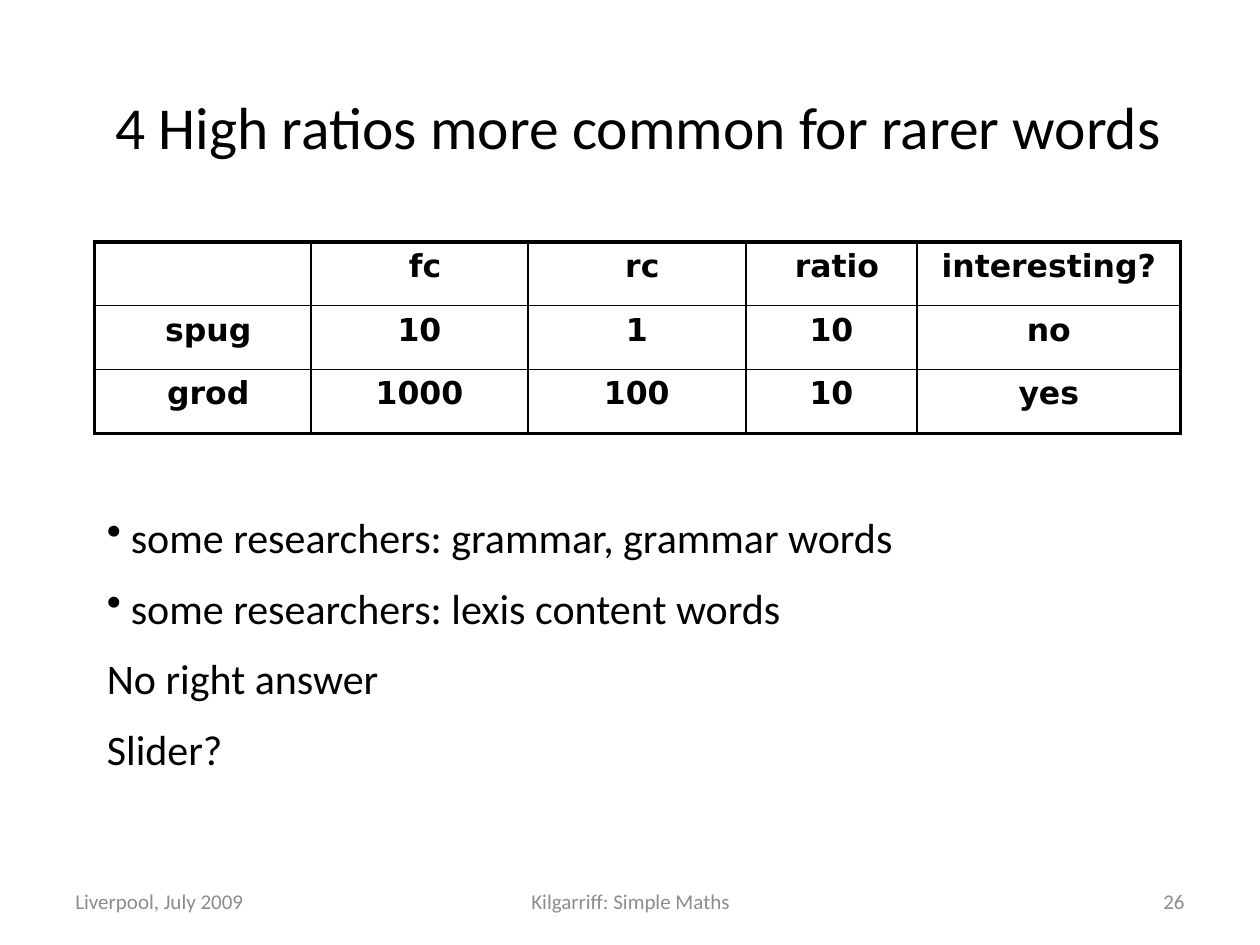
from dataclasses import dataclass

from lxml.etree import SubElement
from pptx import Presentation
from pptx.dml.color import RGBColor
from pptx.enum.text import MSO_ANCHOR, PP_ALIGN
from pptx.oxml import parse_xml
from pptx.oxml.ns import nsdecls, qn
from pptx.util import Emu, Inches, Pt


@dataclass(frozen=True)
class Theme:
    """Colours, typefaces and type sizes of the slide."""

    ink: str = "000000"
    muted: str = "8C8C8C"
    text_font: str = "Calibri"
    table_font: str = "DejaVu Sans"
    title: float = 34
    body: float = 24
    cell: float = 18
    footer: float = 12
    paragraph_gap: float = 11.5
    outer_line: float = 2.25
    inner_line: float = 1


@dataclass(frozen=True)
class Box:
    """A region in inches."""

    left: float
    top: float
    width: float
    height: float

    def emu(self):
        """Return the region as lengths for python-pptx."""
        return [Inches(v) for v in (self.left, self.top, self.width, self.height)]


THEME = Theme()
SLIDE = Box(0, 0, 10, 7.5)
COLUMN_SHARES = (1.72, 1.72, 1.73, 1.36, 2.09)
FREQUENCIES = (
    ("", " fc", " rc", " ratio", "interesting?"),
    (" spug", "10", "1", "10", "no"),
    (" grod", "1000", "100", "10", "yes"),
)
POINTS = (
    ("some researchers: grammar, grammar words", True),
    ("some researchers: lexis content words", True),
    ("No right answer", False),
    ("Slider?", False),
)
FOOTERS = (
    ("Liverpool, July 2009", 0.5, 2.33, PP_ALIGN.LEFT),
    ("Kilgarriff: Simple Maths", 3.42, 3.17, PP_ALIGN.CENTER),
    ("26", 7.17, 2.33, PP_ALIGN.RIGHT),
)


def add_text(paragraph, words, size, align=PP_ALIGN.LEFT, font=THEME.text_font,
             color=THEME.ink, bold=False):
    """Add one formatted run to a paragraph."""
    paragraph.alignment = align
    run = paragraph.add_run()
    run.text = words
    run.font.size = Pt(size)
    run.font.name = font
    run.font.bold = bold
    run.font.color.rgb = RGBColor.from_string(color)


def add_bullet(paragraph, indent):
    """Give a paragraph a hanging bullet."""
    properties = paragraph._p.get_or_add_pPr()
    properties.set("marL", str(Inches(indent)))
    properties.set("indent", str(-Inches(indent)))
    SubElement(properties, qn("a:buChar"), char="•")


def draw_borders(cell, widths):
    """Draw the left, right, top and bottom lines of a cell."""
    properties = cell._tc.get_or_add_tcPr()
    for place, (side, width) in enumerate(zip("LRTB", widths)):
        properties.insert(place, parse_xml(
            f'<a:ln{side} {nsdecls("a")} w="{Pt(width)}"><a:solidFill>'
            f'<a:srgbClr val="{THEME.ink}"/></a:solidFill></a:ln{side}>'))


def place_title(slide, box):
    """Place the slide title."""
    title = slide.shapes.title
    title.left, title.top, title.width, title.height = box.emu()
    title.text_frame.vertical_anchor = MSO_ANCHOR.MIDDLE
    add_text(title.text_frame.paragraphs[0], "4 High ratios more common for rarer words",
             THEME.title, PP_ALIGN.CENTER)


def place_table(slide, box):
    """Place the frequency table with a heavy outer frame."""
    rows, columns = len(FREQUENCIES), len(COLUMN_SHARES)
    table = slide.shapes.add_table(rows, columns, *box.emu()).table
    table.first_row = table.horz_banding = False
    for column, share in zip(table.columns, COLUMN_SHARES):
        column.width = Inches(box.width * share / sum(COLUMN_SHARES))
    for row in table.rows:
        row.height = Emu(Inches(box.height) // rows)
    for r, record in enumerate(FREQUENCIES):
        for c, words in enumerate(record):
            cell = table.cell(r, c)
            cell.fill.background()
            edges = (c == 0, c == columns - 1, r == 0, r == rows - 1)
            draw_borders(cell, [THEME.outer_line if edge else THEME.inner_line
                                for edge in edges])
            if words:
                add_text(cell.text_frame.paragraphs[0], words, THEME.cell,
                         PP_ALIGN.CENTER, THEME.table_font, bold=True)


def place_points(slide, box):
    """Place the discussion points below the table."""
    frame = slide.shapes.add_textbox(*box.emu()).text_frame
    frame.word_wrap = True
    frame.margin_top = Inches(0.62)
    for index, (words, bulleted) in enumerate(POINTS):
        paragraph = frame.add_paragraph() if index else frame.paragraphs[0]
        paragraph.space_before = Pt(THEME.paragraph_gap if index else 0)
        add_text(paragraph, words, THEME.body)
        if bulleted:
            add_bullet(paragraph, 0.19)


def place_footer(slide, box):
    """Place the date, the talk's name and the page number."""
    for words, left, width, align in FOOTERS:
        part = Box(box.left + left, box.top, width, box.height)
        frame = slide.shapes.add_textbox(*part.emu()).text_frame
        frame.word_wrap = True
        frame.vertical_anchor = MSO_ANCHOR.MIDDLE
        add_text(frame.paragraphs[0], words, THEME.footer, align, color=THEME.muted)


def main():
    """Build and save the slide."""
    deck = Presentation()
    deck.slide_width, deck.slide_height = Inches(SLIDE.width), Inches(SLIDE.height)
    slide = deck.slides.add_slide(deck.slide_layouts[5])
    place_title(slide, Box(0.63, 0.33, 8.87, 1.33))
    place_table(slide, Box(0.75, 1.92, 8.62, 1.52))
    place_points(slide, Box(0.75, 3.44, 8.27, 2.9))
    place_footer(slide, Box(0, 6.95, SLIDE.width, 0.4))
    deck.save("out.pptx")


if __name__ == "__main__":
    main()
